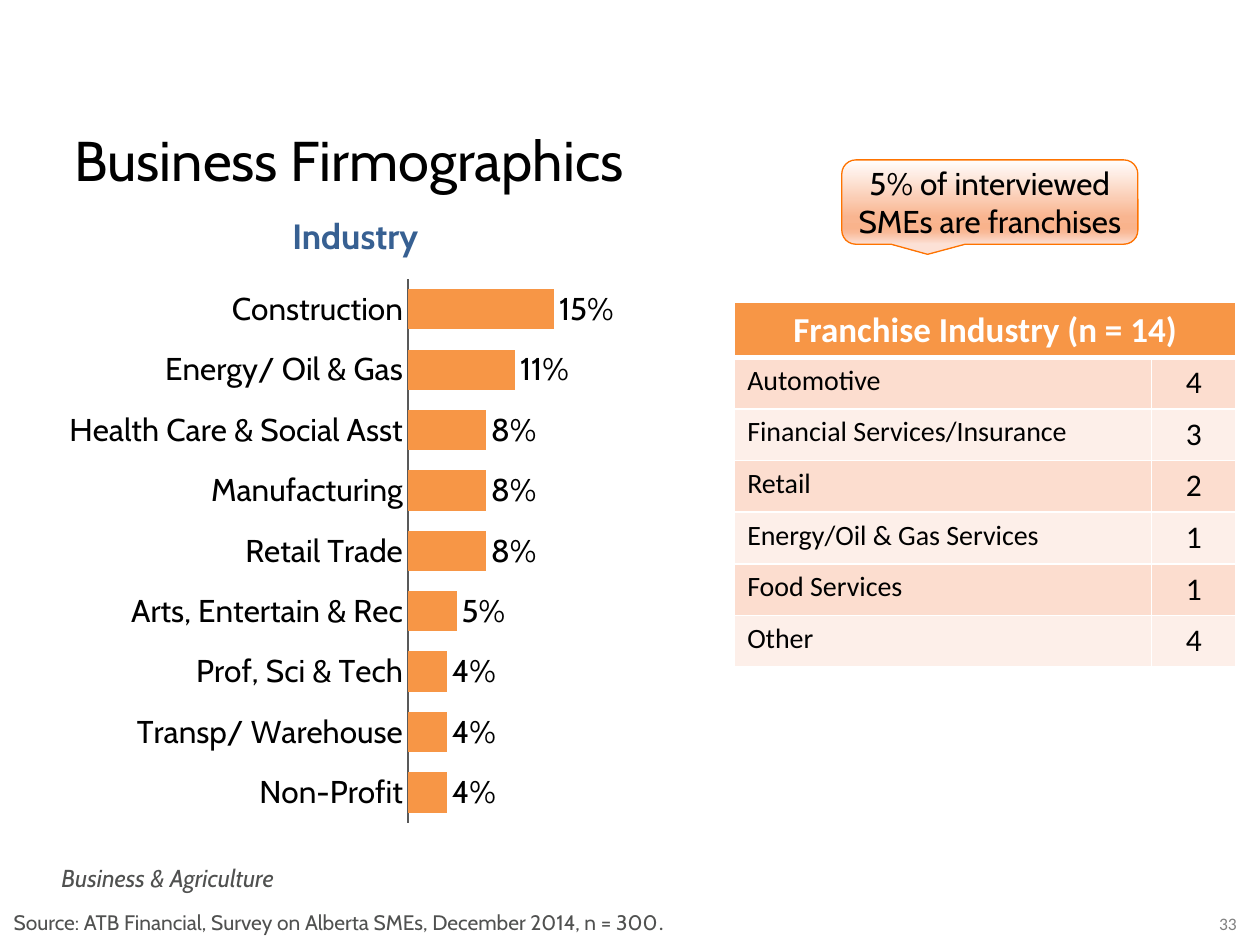
import pptx
import pptx.chart.data
import pptx.dml.color
import pptx.enum.chart
import pptx.enum.shapes
import pptx.enum.text
import pptx.oxml
import pptx.oxml.ns
import pptx.util
from lxml import etree

Pt = pptx.util.Pt
RGB = pptx.dml.color.RGBColor
ALIGN = pptx.enum.text.PP_ALIGN
qn = pptx.oxml.ns.qn

BLACK = RGB(0x00, 0x00, 0x00)
WHITE = RGB(0xFF, 0xFF, 0xFF)
GREY = RGB(0x50, 0x51, 0x50)
PALE = RGB(0x80, 0x80, 0x80)
AXIS = RGB(0x59, 0x59, 0x59)
BLUE = RGB(0x37, 0x60, 0x92)
ORANGE = RGB(0xF7, 0x96, 0x46)
EDGE = RGB(0xFE, 0x73, 0x00)
BANDS = RGB(0xFC, 0xDD, 0xCF), RGB(0xFD, 0xEF, 0xE9)
FADE = [(0, RGB(0xFF, 0xFE, 0xFE)), (68, RGB(0xF9, 0xB5, 0x90)),
        (81, RGB(0xF9, 0xB3, 0x8C)), (86, RGB(0xF9, 0xBA, 0x99)),
        (100, RGB(0xFC, 0xE1, 0xD6))]

# box, text runs (text, font), size, colour, align, bold, italic
TEXTS = [
    ((684, 518.4, 35.3, 19.4), [("33", "Calibri")], 10, PALE, ALIGN.CENTER, False, False),
    ((28, 489.6, 202.3, 24.5), [("Business & Agriculture", "Cabin")],
     14, GREY, ALIGN.LEFT, False, True),
    ((35.3, 68.4, 420.5, 46), [("Business Firmographics", "Cabin")],
     32, BLACK, ALIGN.LEFT, False, False),
    ((110.9, 118.8, 184.3, 31.7), [("Industry", "Cabin")], 20, BLUE, ALIGN.CENTER, True, False),
    ((0.7, 516.2, 670.3, 21.6),
     [("Source: ATB Financial, Survey on Alberta SMEs, December 2014, n = 300", "Cabin"),
      (".", "Calibri")], 12, GREY, ALIGN.LEFT, False, False),
]

SHARES = [
    ("Construction", 0.15), ("Energy/ Oil & Gas", 0.11),
    ("Health Care & Social Asst", 0.08), ("Manufacturing", 0.08),
    ("Retail Trade", 0.08), ("Arts, Entertain & Rec", 0.05),
    ("Prof, Sci & Tech", 0.04), ("Transp/ Warehouse", 0.04), ("Non-Profit", 0.04),
]
PLOT = {"x": 0.57, "y": 0, "w": 0.43, "h": 0.96}

HEAD = "Franchise Industry (n = 14)"
COUNTS = [("Automotive", 4), ("Financial Services/Insurance", 3), ("Retail", 2),
          ("Energy/Oil & Gas Services", 1), ("Food Services", 1), ("Other", 4)]
COLS = 238.3, 48.2
ROW = 29.5

CALL = "5% of interviewed SMEs are franchises"


def style(font, size, color, bold=False, italic=False, name=None):
    font.size, font.bold, font.italic = Pt(size), bold, italic
    font.color.rgb = color
    if name:
        font.name = name


def add_text(slide, box, runs, size, color, align, bold, italic):
    frame = slide.shapes.add_textbox(*map(Pt, box)).text_frame
    frame.word_wrap = True
    para = frame.paragraphs[0]
    para.alignment = align
    style(para.font, size, color, bold, italic, runs[0][1])
    for text, name in runs:
        run = para.add_run()
        run.text = text
        if len(runs) > 1:
            run.font.name = name


def add_bars(slide):
    data = pptx.chart.data.CategoryChartData(number_format="0%")
    data.categories = [name for name, _ in SHARES]
    data.add_series("Series 1", [share for _, share in SHARES])
    kind = pptx.enum.chart.XL_CHART_TYPE.BAR_CLUSTERED
    chart = slide.shapes.add_chart(
        kind, Pt(11.5), Pt(159.1), Pt(388.8), Pt(324), data).chart
    chart.has_legend = chart.has_title = False
    style(chart.font, 18, BLACK, name="Cabin")

    cats, vals = chart.category_axis, chart.value_axis
    cats.reverse_order = True
    cats.major_tick_mark = pptx.enum.chart.XL_TICK_MARK.NONE
    cats.format.line.color.rgb = AXIS
    vals.minimum_scale, vals.maximum_scale = 0, 0.3
    vals.has_major_gridlines = vals.visible = False

    plot = chart.plots[0]
    plot.gap_width = 50
    plot.vary_by_categories = False
    fill = plot.series[0].format.fill
    fill.solid()
    fill.fore_color.rgb = ORANGE
    plot.has_data_labels = True
    labels = plot.data_labels
    labels.show_value = True
    labels.number_format, labels.number_format_is_linked = "0%", False
    labels.position = pptx.enum.chart.XL_LABEL_POSITION.OUTSIDE_END
    style(labels.font, 18, BLACK, name="Cabin")

    area = chart.element.find(".//" + qn("c:plotArea"))
    for old in area.findall(qn("c:layout")):
        area.remove(old)
    layout = etree.Element(qn("c:layout"))
    area.insert(0, layout)
    manual = etree.SubElement(layout, qn("c:manualLayout"))
    parts = {"layoutTarget": "inner", "xMode": "edge", "yMode": "edge", **PLOT}
    for key, value in parts.items():
        etree.SubElement(manual, qn("c:" + key)).set("val", str(value))


def fill_cell(cell, text, size, ink, back, align, bold=False, base=1):
    cell.text = text
    para = cell.text_frame.paragraphs[0]
    para.alignment = align
    style(para.font, size, ink, bold, name="Calibri")
    props = cell._tc.get_or_add_tcPr()
    for side, width in zip("LRTB", (1, 1, 1, base)):
        line = etree.SubElement(props, qn("a:ln" + side), w=str(Pt(width)))
        solid = etree.SubElement(line, qn("a:solidFill"))
        etree.SubElement(solid, qn("a:srgbClr"), val=str(WHITE))
    cell.fill.solid()
    cell.fill.fore_color.rgb = back


def add_counts(slide):
    rows = len(COUNTS) + 1
    table = slide.shapes.add_table(
        rows, 2, Pt(419.8), Pt(173), Pt(sum(COLS)), Pt(ROW * rows)).table
    table.horz_banding = False
    for col, width in zip(table.columns, COLS):
        col.width = Pt(width)
    table.cell(0, 0).merge(table.cell(0, 1))
    fill_cell(table.cell(0, 0), HEAD, 20, WHITE, ORANGE, ALIGN.CENTER, True, 3)
    for i, (name, count) in enumerate(COUNTS):
        back = BANDS[i % 2]
        fill_cell(table.cell(i + 1, 0), name, 16, BLACK, back, ALIGN.LEFT)
        fill_cell(table.cell(i + 1, 1), str(count), 18, BLACK, back, ALIGN.CENTER)


def add_call(slide):
    kind = pptx.enum.shapes.MSO_SHAPE.ROUNDED_RECTANGULAR_CALLOUT
    shape = slide.shapes.add_shape(kind, Pt(481), Pt(91.4), Pt(169.2), Pt(48.2))
    shape.shadow.inherit = False
    shape.adjustments[0], shape.adjustments[1] = -0.21, 0.62
    shape.line.color.rgb, shape.line.width = EDGE, Pt(0.75)
    shape.fill.gradient()
    shape.fill.gradient_angle = 270
    stops = shape.element.find(".//" + qn("a:gsLst"))
    for old in list(stops):
        stops.remove(old)
    for place, color in FADE:
        stop = etree.SubElement(stops, qn("a:gs"), pos=str(place * 1000))
        etree.SubElement(stop, qn("a:srgbClr"), val=str(color))
    frame = shape.text_frame
    frame.word_wrap = True
    frame.margin_left = frame.margin_right = Pt(4)
    frame.vertical_anchor = pptx.enum.text.MSO_ANCHOR.MIDDLE
    para = frame.paragraphs[0]
    para.text, para.alignment = CALL, ALIGN.CENTER
    style(para.font, 18, BLACK, name="Cabin")


def main():
    deck = pptx.Presentation()
    deck.slide_width, deck.slide_height = Pt(720), Pt(540)
    slide = deck.slides.add_slide(deck.slide_layouts[6])
    for item in TEXTS:
        add_text(slide, *item)
    add_bars(slide)
    add_counts(slide)
    add_call(slide)
    deck.save("out.pptx")


if __name__ == "__main__":
    main()
